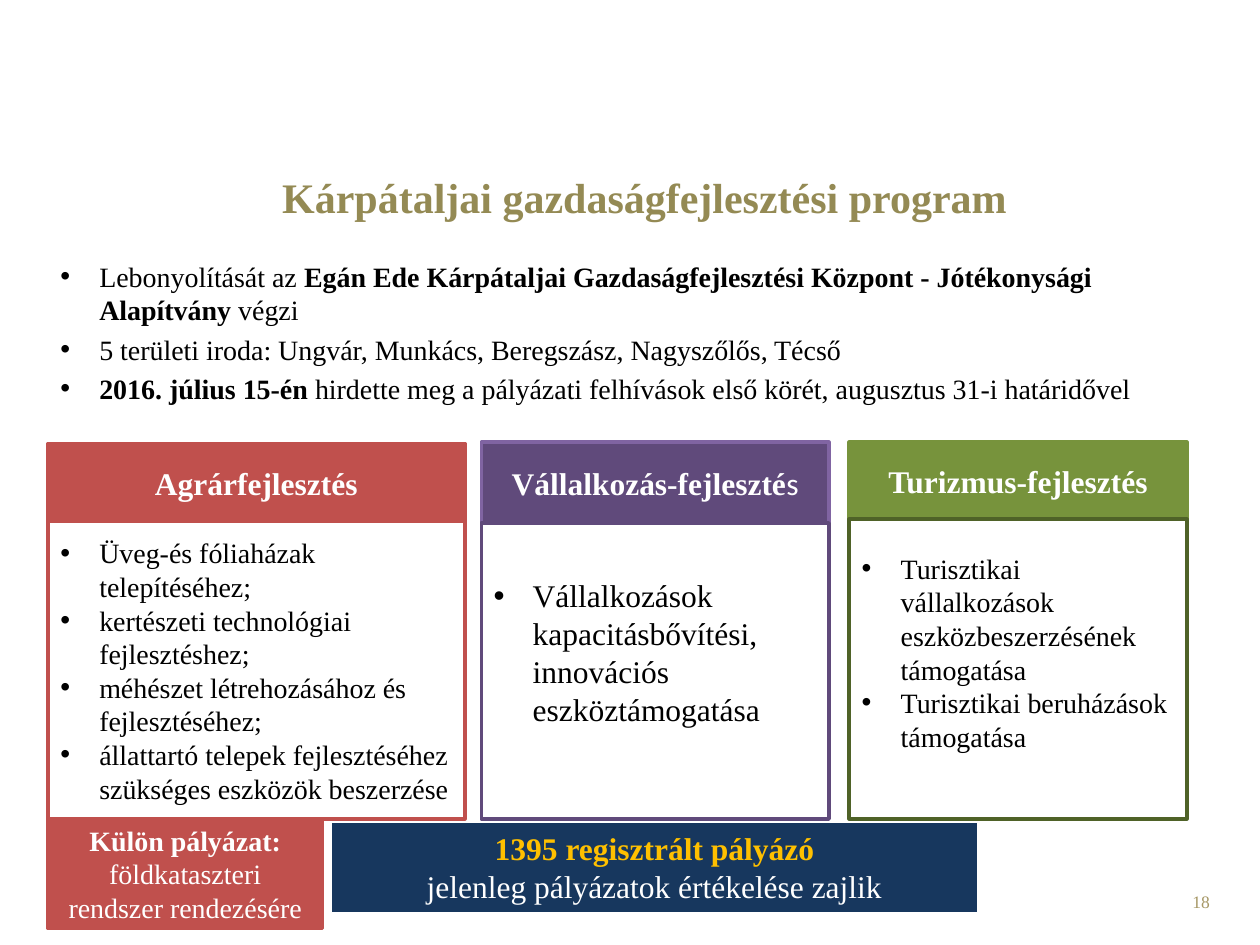
import lxml.etree
import pptx
import pptx.dml.color
import pptx.enum.shapes
import pptx.enum.text
import pptx.oxml.ns
import pptx.util

COLUMNS, ROWS = 100, 75
SLIDE_WIDTH, SLIDE_HEIGHT = pptx.util.Inches(10), pptx.util.Inches(7.5)
COLORS = {
    "black": "000000", "white": "FFFFFF", "khaki": "948A54", "sand": "A69765",
    "red": "C0504D", "purple": "604A7B", "violet": "8064A2", "green": "77933C",
    "olive": "4F6228", "navy": "17375E", "gold": "FFC000",
}
CENTER = pptx.enum.text.PP_ALIGN.CENTER
RIGHT = pptx.enum.text.PP_ALIGN.RIGHT
TOP = pptx.enum.text.MSO_ANCHOR.TOP
MIDDLE = pptx.enum.text.MSO_ANCHOR.MIDDLE
BOLD = {"bold": True}


def color(name):
    """Return the named palette colour."""
    return pptx.dml.color.RGBColor.from_string(COLORS[name])


def place(left, top, width, height):
    """Convert grid columns and rows to slide lengths."""
    column, row = SLIDE_WIDTH / COLUMNS, SLIDE_HEIGHT / ROWS
    return [int(length) for length in
            (left * column, top * row, width * column, height * row)]


def apply(target, values):
    """Set every attribute named in a dict of format values."""
    for name, value in values.items():
        setattr(target, name, value)


def add_bullet(paragraph):
    """Give a paragraph a round bullet with a hanging indent."""
    properties = paragraph._p.get_or_add_pPr()
    indent = pptx.util.Inches(0.31)
    properties.set("marL", str(indent))
    properties.set("indent", str(-indent))
    for tag, name, value in (("a:buFont", "typeface", "Arial"), ("a:buChar", "char", "•")):
        element = lxml.etree.SubElement(properties, pptx.oxml.ns.qn(tag))
        element.set(name, value)


def write(shape, paragraphs, size, ink, align=None, anchor=TOP, bullets=False,
          gap=0, bottom=0.05):
    """Fill a shape with paragraphs made of (text, font values) runs."""
    frame = shape.text_frame
    apply(frame, {"word_wrap": True, "vertical_anchor": anchor,
                  "margin_bottom": pptx.util.Inches(bottom)})
    for index, runs in enumerate(paragraphs):
        paragraph = frame.add_paragraph() if index else frame.paragraphs[0]
        paragraph.alignment = align or pptx.enum.text.PP_ALIGN.LEFT
        if index and gap:
            paragraph.space_before = pptx.util.Pt(gap)
        if bullets:
            add_bullet(paragraph)
        for text, values in runs:
            run = paragraph.add_run()
            run.text = text
            font = {"name": "Times New Roman", "size": pptx.util.Pt(size), "bold": False}
            font.update(values)
            run.font.color.rgb = color(font.pop("ink", ink))
            apply(run.font, font)


def add_text(slide, area, paragraphs, size, ink, **layout):
    """Add a plain text box."""
    write(slide.shapes.add_textbox(*place(*area)), paragraphs, size, ink, **layout)


def add_panel(slide, area, fill, line, paragraphs, size, ink, weight=2, **layout):
    """Add a filled and outlined rectangle with text."""
    shape = slide.shapes.add_shape(
        pptx.enum.shapes.MSO_SHAPE.RECTANGLE, *place(*area))
    shape.shadow.inherit = False
    shape.fill.solid()
    shape.fill.fore_color.rgb = color(fill)
    shape.line.color.rgb = color(line)
    shape.line.width = pptx.util.Pt(weight)
    write(shape, paragraphs, size, ink, **layout)


def add_programme(slide, left, width, top, split, heading, fill, head_line,
                  body_line, items, size, bottom):
    """Add one programme: a coloured heading over a bulleted panel."""
    add_panel(slide, (left, top, width, split - top), fill, head_line, [heading],
              18, "white", align=CENTER, anchor=MIDDLE)
    add_panel(slide, (left, split, width, 65 - split), "white", body_line,
              [[(item, {})] for item in items], size, "black",
              anchor=MIDDLE, bullets=True, bottom=bottom)


def main():
    """Build and save the slide."""
    presentation = pptx.Presentation()
    apply(presentation, {"slide_width": SLIDE_WIDTH, "slide_height": SLIDE_HEIGHT})
    slide = presentation.slides.add_slide(presentation.slide_layouts[6])

    add_text(slide, (73.7, 70.2, 23.3, 4), [[("18", {})]], 10, "sand", align=RIGHT)
    add_text(slide, (3.8, 20.1, 91.1, 15.7), [
        [("Lebonyolítását az ", {}),
         ("Egán Ede Kárpátaljai Gazdaságfejlesztési Központ - Jótékonysági Alapítvány", BOLD),
         (" végzi", {})],
        [("5 területi iroda: Ungvár, Munkács, Beregszász, Nagyszőlős, Técső", {})],
        [("2016. július 15-én ", BOLD),
         ("hirdette meg a pályázati felhívások első körét, augusztus 31-i határidővel", {})],
    ], 16, "black", bullets=True, gap=3.2)
    add_text(slide, (11.4, 13.1, 79.5, 9.4),
             [[("Kárpátaljai gazdaságfejlesztési program", BOLD)]],
             24, "khaki", align=CENTER)

    programmes = [
        (3.8, 33.1, 35.2, 41.4, [("Agrárfejlesztés", BOLD)], "red", "red", "red",
         ["Üveg-és fóliaházak telepítéséhez;",
          "kertészeti technológiai fejlesztéshez;",
          "méhészet létrehozásához és fejlesztéséhez;",
          "állattartó telepek fejlesztéséhez szükséges eszközök beszerzése"], 16, 0.05),
        (38.2, 27.6, 35.1, 41.5,
         [("Vállalkozás-fejleszté", BOLD), ("s", {"name": "Calibri"})],
         "purple", "violet", "purple",
         ["Vállalkozások kapacitásbővítési, innovációs eszköztámogatása"], 18, 0.35),
        (67.4, 26.8, 35.1, 41.2, [("Turizmus-fejlesztés", BOLD)],
         "green", "green", "olive",
         ["Turisztikai vállalkozások eszközbeszerzésének támogatása",
          "Turisztikai beruházások támogatása"], 16, 0.32),
    ]
    for programme in programmes:
        add_programme(slide, *programme)

    add_panel(slide, (26.3, 65.3, 51.3, 7.1), "navy", "white", [
        [("1395 regisztrált pályázó", {"bold": True, "ink": "gold"})],
        [("jelenleg pályázatok értékelése zajlik", {})],
    ], 18, "white", weight=0.75, align=CENTER)
    add_panel(slide, (3.8, 65, 21.8, 8.7), "red", "red", [
        [("Külön pályázat: ", BOLD), ("földkataszteri rendszer rendezésére", {})],
    ], 16, "white", align=CENTER, anchor=MIDDLE)

    presentation.save("out.pptx")


if __name__ == "__main__":
    main()
